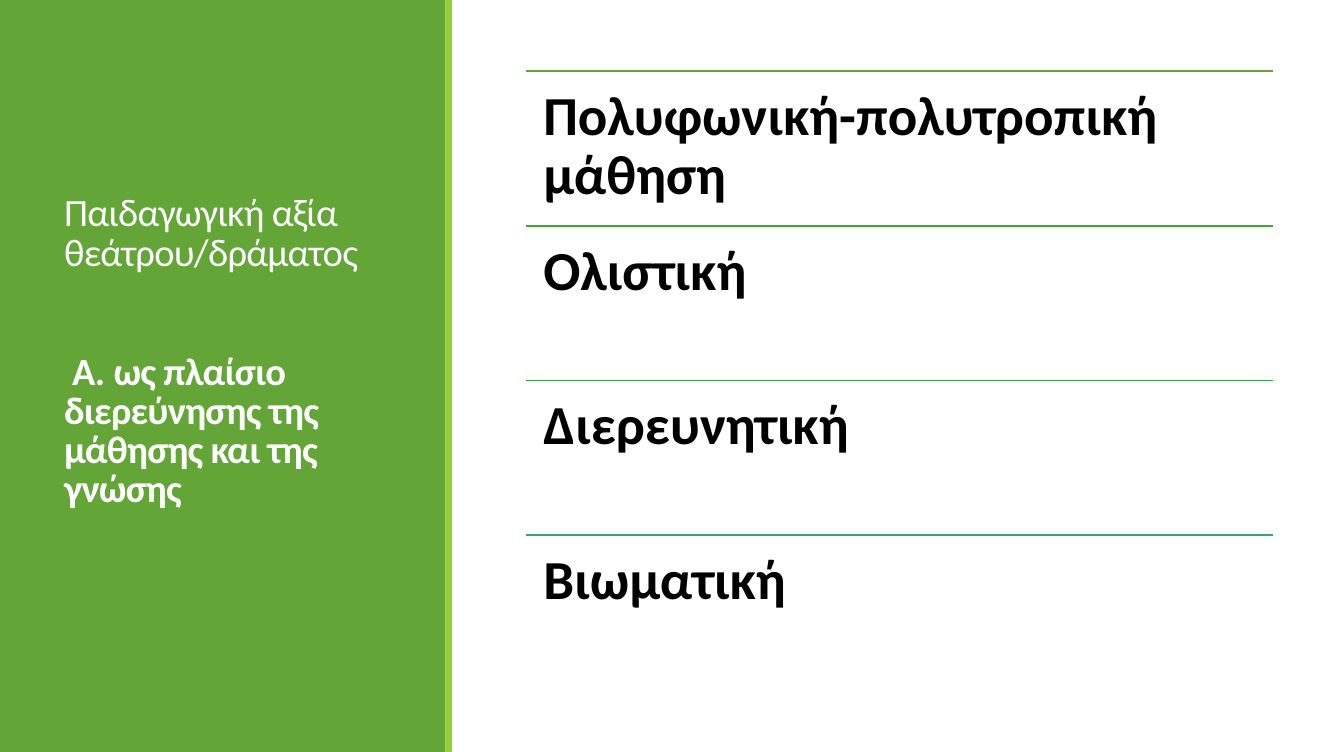
import pptx
import pptx.util
import pptx.dml.color
import pptx.enum.shapes
import pptx.enum.text
import pptx.oxml.ns
import lxml.etree

WIDTH, HEIGHT = 13.58, 7.6
PANEL_WIDTH, STRIPE_WIDTH = 4.5, 0.07
FONT = "Calibri"
COLOURS = {"panel": "63A537", "stripe": "99CB38", "white": "FFFFFF", "black": "000000"}
TOPICS = [
    ("Πολυφωνική-πολυτροπική μάθηση", "63A537"),
    ("Ολιστική", "42A637"),
    ("Διερευνητική", "37A64D"),
    ("Βιωματική", "37A76F"),
]


def inches(*lengths):
    return [pptx.util.Inches(length) for length in lengths]


def rgb(value):
    return pptx.dml.color.RGBColor.from_string(value)


def add_block(page, left, top, width, height, colour):
    block = page.shapes.add_shape(
        pptx.enum.shapes.MSO_SHAPE.RECTANGLE, *inches(left, top, width, height))
    block.shadow.inherit = False
    block.fill.solid()
    block.fill.fore_color.rgb = rgb(colour)
    block.line.fill.background()


def add_rule(page, left, top, width, colour):
    rule = page.shapes.add_connector(
        pptx.enum.shapes.MSO_CONNECTOR.STRAIGHT, *inches(left, top, left + width, top))
    rule.line.color.rgb = rgb(colour)
    rule.line.width = pptx.util.Pt(1.25)
    lxml.etree.SubElement(rule._element.spPr, pptx.oxml.ns.qn("a:effectLst"))


def add_frame(page, left, top, width, height, inset_x, inset_y, anchor):
    frame = page.shapes.add_textbox(*inches(left, top, width, height)).text_frame
    frame.word_wrap = True
    frame.vertical_anchor = anchor
    frame.margin_left, frame.margin_right = inches(inset_x, inset_x)
    frame.margin_top, frame.margin_bottom = inches(inset_y, inset_y)
    return frame


def write(para, text, *, size, colour, bold=False, line_spacing=1.0,
          space_before=0, tracking=0, indent=0, tab=0):
    para.line_spacing = line_spacing
    if space_before:
        para.space_before = pptx.util.Pt(space_before)
    if tab:
        properties = para._p.get_or_add_pPr()
        properties.set("marL", "0")
        properties.set("indent", str(pptx.util.Inches(indent)))
        tabs = lxml.etree.SubElement(properties, pptx.oxml.ns.qn("a:tabLst"))
        lxml.etree.SubElement(tabs, pptx.oxml.ns.qn("a:tab"),
                              pos=str(pptx.util.Inches(tab)), algn="l")
    span = para.add_run()
    span.text = text
    span.font.name = FONT
    span.font.size = pptx.util.Pt(size)
    span.font.bold = bold
    span.font.color.rgb = rgb(colour)
    if tracking:
        span._r.get_or_add_rPr().set("spc", str(round(tracking * 100)))


def add_title_panel(page, left, top, width, height):
    # Green panel with its light stripe
    add_block(page, left, top, width, height, COLOURS["panel"])
    add_block(page, left + width, top, STRIPE_WIDTH, height, COLOURS["stripe"])
    # Title and subtitle
    frame = add_frame(page, left + 0.55, top + 0.57, 3.44, 6, 0.1, 0.05,
                      pptx.enum.text.MSO_ANCHOR.MIDDLE)
    style = dict(size=28, colour=COLOURS["white"], line_spacing=0.85, tracking=-0.5)
    write(frame.paragraphs[0], "Παιδαγωγική αξία θεάτρου/δράματος", **style)
    write(frame.add_paragraph(), "Α.\tως πλαίσιο διερεύνησης της μάθησης και της γνώσης",
          bold=True, space_before=58, indent=0.08, tab=0.57, **style)


def add_topic_list(page, left, top, width, height):
    row_height = height / len(TOPICS)
    for row, (topic, colour) in enumerate(TOPICS):
        row_top = top + row * row_height
        add_rule(page, left, row_top, width, colour)
        frame = add_frame(page, left, row_top, width, row_height, 0.17, 0.17,
                          pptx.enum.text.MSO_ANCHOR.TOP)
        write(frame.paragraphs[0], topic, size=40, colour=COLOURS["black"],
              bold=True, line_spacing=0.9)


def main():
    deck = pptx.Presentation()
    deck.slide_width, deck.slide_height = inches(WIDTH, HEIGHT)
    page = deck.slides.add_slide(deck.slide_layouts[6])
    add_title_panel(page, 0, 0, PANEL_WIDTH, HEIGHT)
    add_topic_list(page, 5.32, 0.72, 7.54, 6.25)
    deck.save("out.pptx")


if __name__ == "__main__":
    main()
